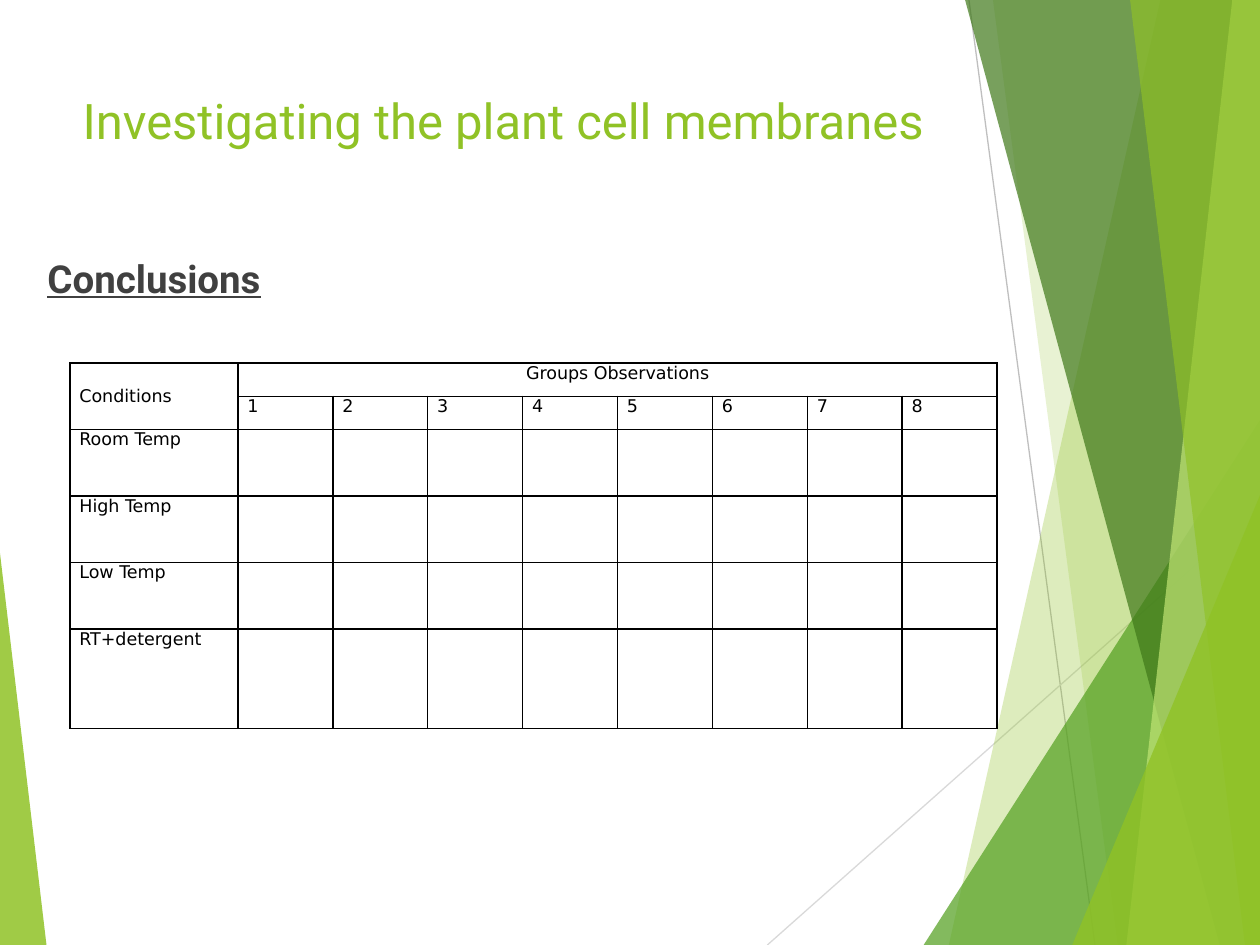
from pptx import Presentation
from pptx.dml.color import RGBColor
from pptx.enum.shapes import MSO_CONNECTOR, MSO_SHAPE
from pptx.enum.text import MSO_ANCHOR, MSO_AUTO_SIZE, PP_ALIGN
from pptx.oxml import parse_xml
from pptx.oxml.ns import qn
from pptx.util import Pt
from lxml.etree import SubElement

THEME = {
    "lime": "90C226", "leaf": "54A021", "moss": "3F7819", "pale": "C0E474",
    "gray": "BFBFBF", "mist": "D9D9D9", "ink": "404040", "black": "000000",
    "head": "Roboto", "body": "DejaVu Sans",
    "title": 28, "sub": 22, "cell": 10,
}
WIDE, HIGH = 720, 540

TITLE = "Investigating the plant cell membranes"
HEADING = "Conclusions"
CORNER, SPAN = "Conditions", "Groups Observations"
GROUPS = [str(n) for n in range(1, 9)]
LABELS = ["Room Temp", "High Temp", "Low Temp", "RT+detergent"]

LINES = [
    ((553.7, 0), (625.7, HIGH), "gray"),
    ((WIDE, 290.2), (438.5, HIGH), "mist"),
]
# kind, geometry, colour, opacity
DECOR = [
    ("panel", (663.1, 542.2), "lime", 30),
    ("panel", (567.4, 638.6), "lime", 20),
    ("right", (527.8, 240, 192.2, 300), "leaf", 72),
    ("panel", (551.5, 697), "moss", 70),
    ("panel", (704.2, 643.7), "pale", 70),
    ("panel", (645.8, 711.4), "lime", 65),
    ("right", (612.7, 283, 107.3, 257), "lime", 80),
    ("left", (0, 316, 26.6, 224), "lime", 85),
]
APEX = {"left": 0, "right": 1}


def color(name):
    return RGBColor.from_string(THEME[name])


def paint(shape, name, alpha):
    shape.shadow.inherit = False
    shape.line.fill.background()
    shape.fill.solid()
    shape.fill.fore_color.rgb = color(name)
    tint = shape.fill._xPr.find(qn("a:solidFill"))[0]
    SubElement(tint, qn("a:alpha")).set("val", str(alpha * 1000))


def panel(shapes, top, base):
    points = [(top, 0), (WIDE, 0), (WIDE, HIGH), (base, HIGH)]
    first, *rest = [(Pt(x), Pt(y)) for x, y in points]
    pen = shapes.build_freeform(*first)
    pen.add_line_segments(rest, close=True)
    return pen.convert_to_shape()


def wedge(shapes, side, box):
    shape = shapes.add_shape(MSO_SHAPE.ISOSCELES_TRIANGLE, *map(Pt, box))
    shape.adjustments[0] = APEX[side]
    return shape


def decorate(shapes):
    for start, end, name in LINES:
        line = shapes.add_connector(
            MSO_CONNECTOR.STRAIGHT, *map(Pt, start + end))
        line.line.color.rgb = color(name)
        line.line.width = Pt(0.75)
        SubElement(line._element.spPr, qn("a:effectLst"))
    for kind, where, name, alpha in DECOR:
        if kind == "panel":
            shape = panel(shapes, *where)
        else:
            shape = wedge(shapes, kind, where)
        paint(shape, name, alpha)


def write(frame, text, size, face, name, align=PP_ALIGN.LEFT):
    frame.text = text
    para = frame.paragraphs[0]
    para.alignment = align
    for run in para.runs:
        run.font.size = Pt(THEME[size])
        run.font.name = THEME[face]
        run.font.color.rgb = color(name)
    return para


def place(shape, left, top, width, height):
    shape.left, shape.top = Pt(left), Pt(top)
    shape.width, shape.height = Pt(width), Pt(height)
    frame = shape.text_frame
    frame.word_wrap = True
    frame.auto_size = MSO_AUTO_SIZE.NONE
    frame.vertical_anchor = MSO_ANCHOR.TOP
    return frame


def border(cell):
    props = cell._tc.get_or_add_tcPr()
    for side in ("lnL", "lnR", "lnT", "lnB"):
        props.append(parse_xml(
            f'<a:{side} xmlns:a="http://schemas.openxmlformats.org/'
            f'drawingml/2006/main" w="{Pt(1)}"><a:solidFill>'
            f'<a:srgbClr val="{THEME["black"]}"/></a:solidFill></a:{side}>'))


def build_table(shapes):
    blank = [""] * len(GROUPS)
    rows = [[CORNER, SPAN] + blank[1:], [""] + GROUPS]
    rows += [[label] + blank for label in LABELS]
    wide = [96] + [54.25] * len(GROUPS)
    high = [19, 19, 38, 38, 38, 57]
    table = shapes.add_table(
        len(rows), len(wide), Pt(40), Pt(207.5),
        Pt(sum(wide)), Pt(sum(high))).table
    table.first_row = table.horz_banding = False
    for col, size in zip(table.columns, wide):
        col.width = Pt(size)
    for row, size, texts in zip(table.rows, high, rows):
        row.height = Pt(size)
        for cell, text in zip(row.cells, texts):
            border(cell)
            cell.fill.background()
            cell.margin_left = cell.margin_right = Pt(5.4)
            cell.margin_top = cell.margin_bottom = 0
            write(cell.text_frame, text, "cell", "body", "black")
    table.cell(0, 0).merge(table.cell(1, 0))
    table.cell(0, 0).vertical_anchor = MSO_ANCHOR.MIDDLE
    table.cell(0, 1).merge(table.cell(0, len(GROUPS)))
    table.cell(0, 1).text_frame.paragraphs[0].alignment = PP_ALIGN.CENTER


def main():
    deck = Presentation()
    deck.slide_width, deck.slide_height = Pt(WIDE), Pt(HIGH)
    slide = deck.slides.add_slide(deck.slide_layouts[5])
    shapes = slide.shapes
    decorate(shapes)

    title = shapes.title
    write(place(title, 40, 48, 508, 104), TITLE, "title", "head", "lime")
    shapes._spTree.append(title._element)

    build_table(shapes)

    box = shapes.add_textbox(0, 0, 0, 0)
    frame = place(box, 20, 142, 176, 55)
    font = write(frame, HEADING, "sub", "head", "ink").runs[0].font
    font.bold = font.underline = True

    deck.save("out.pptx")


if __name__ == "__main__":
    main()
